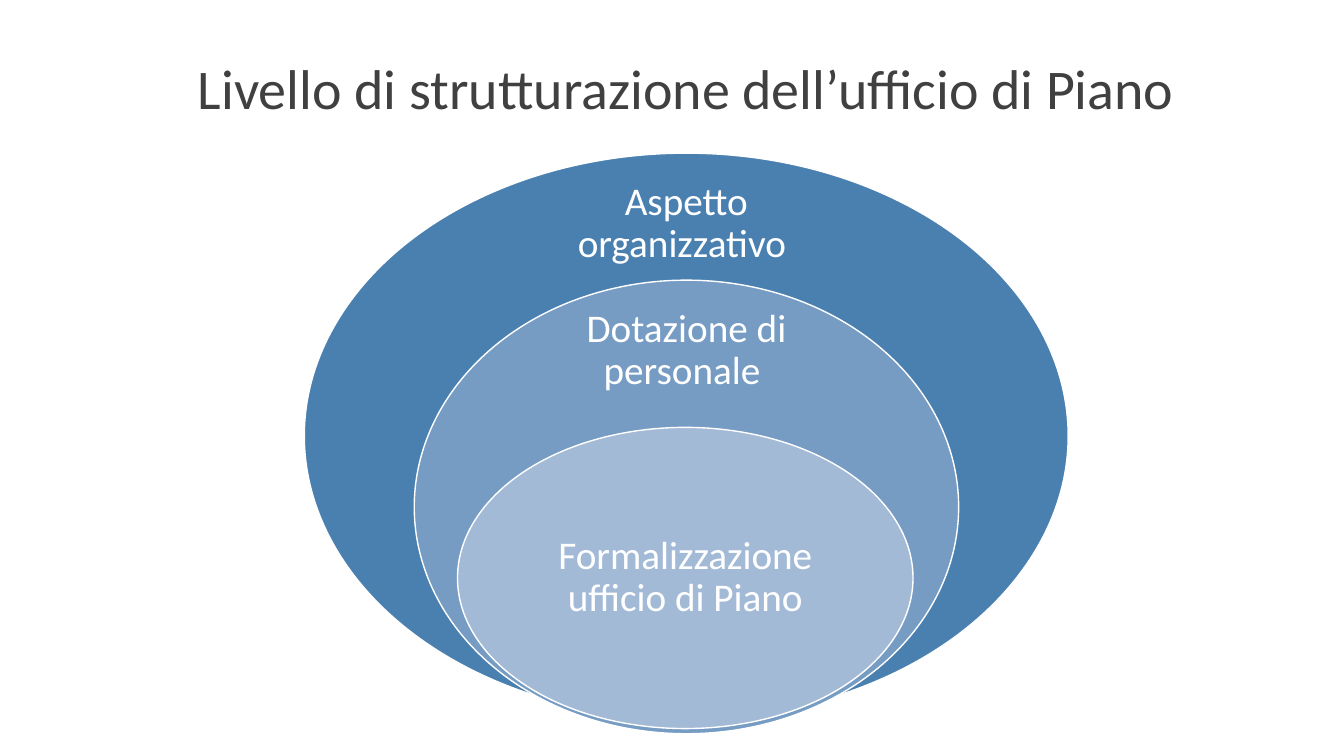
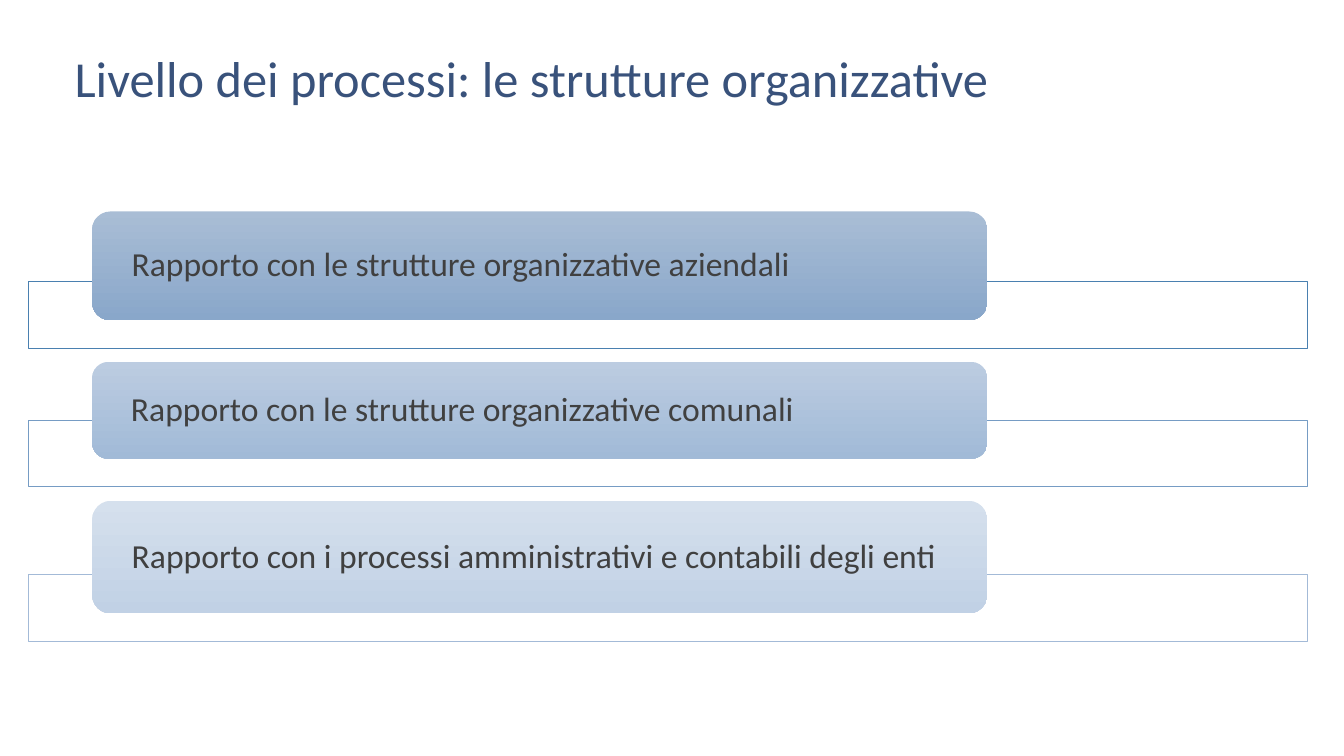
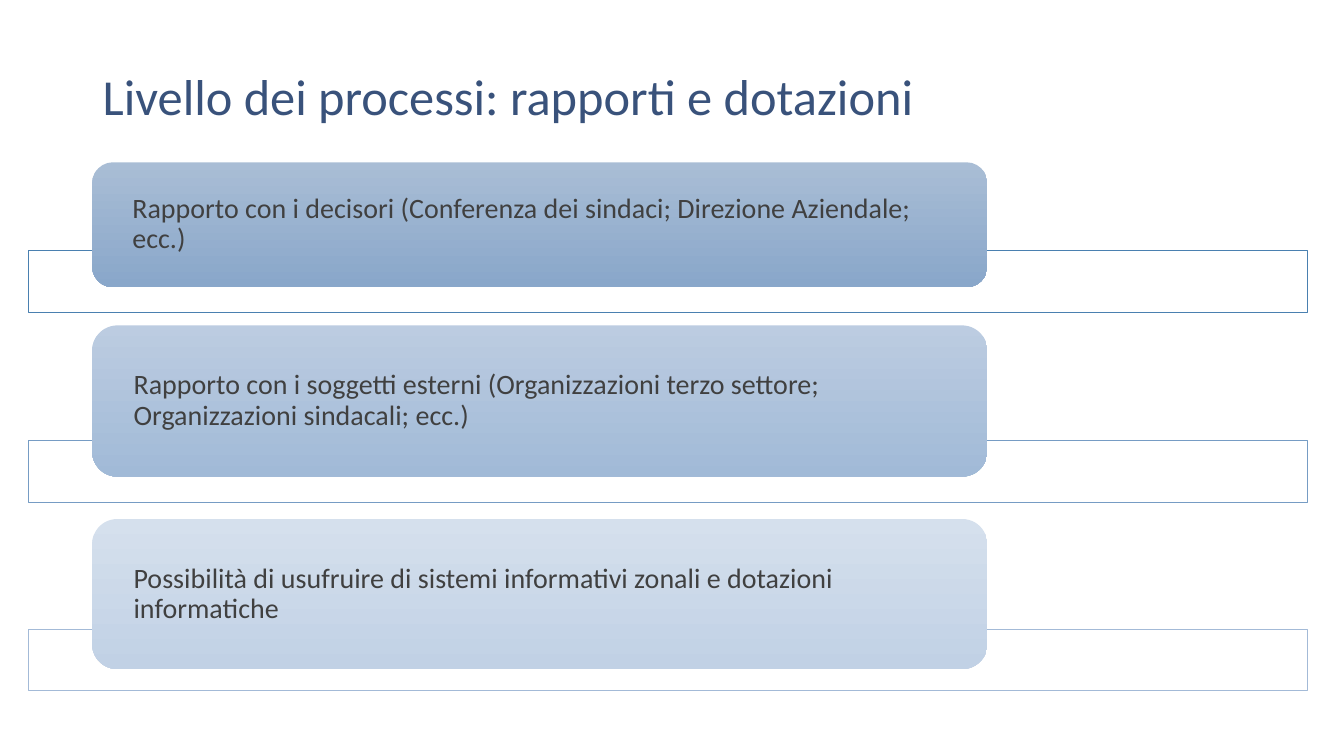
from pptx import Presentation
from pptx.dml.color import RGBColor
from pptx.enum.shapes import MSO_SHAPE
from pptx.enum.text import MSO_ANCHOR, PP_ALIGN
from pptx.util import Cm, Pt

FONT = "Calibri"
HUES = {
    "white": "FFFFFF",
    "text": "404040",
    "title": "39527B",
    "deep": "4A80B0",
    "mid": "769CC4",
    "pale": "A3BAD7",
}
RAMPS = {
    "deep": ("A9BDD5", "89A7CA"),
    "mid": ("BCCCE1", "A1BAD7"),
    "pale": ("D5E0ED", "C1D1E5"),
}


def tint(key):
    """Return the named colour."""
    return RGBColor.from_string(HUES[key])


def write(shape, text, size, hue, align=PP_ALIGN.LEFT, lead=0.9,
          anchor=MSO_ANCHOR.MIDDLE, pad=(0.25, 0.13), wrap=True):
    """Fill a shape with one styled paragraph."""
    frame = shape.text_frame
    frame.word_wrap = wrap
    frame.vertical_anchor = anchor
    frame.margin_left = frame.margin_right = Cm(pad[0])
    frame.margin_top = frame.margin_bottom = Cm(pad[1])
    line = frame.paragraphs[0]
    line.text = text
    line.alignment = align
    line.line_spacing = lead
    line.font.name = FONT
    line.font.size = Pt(size)
    line.font.color.rgb = tint(hue)


def label(slide, box, text, size, hue, **style):
    """Place a text box."""
    frame = slide.shapes.add_textbox(*map(Cm, box))
    write(frame, text, size, hue, **style)


def form(slide, kind, box, fill=None, edge=None, width=1):
    """Place a flat shape with an optional fill and outline."""
    shape = slide.shapes.add_shape(kind, *map(Cm, box))
    shape.shadow.inherit = False
    if fill:
        shape.fill.solid()
        shape.fill.fore_color.rgb = tint(fill)
    if edge:
        shape.line.color.rgb = tint(edge)
        shape.line.width = Pt(width)
    else:
        shape.line.fill.background()
    return shape


def head(slide, box, text):
    """Place the title of a list slide."""
    label(slide, box, text, 36, "title", lead=0.8, anchor=MSO_ANCHOR.BOTTOM)


def ring(slide, box, hue, text, drop, size):
    """Draw an ellipse with a centred label a given drop below its top."""
    left, top, width, _ = box
    form(slide, MSO_SHAPE.OVAL, box, hue, "white")
    wide, high = size
    label(slide, (left + (width - wide) / 2, top + drop, wide, high), text,
          28, "white", align=PP_ALIGN.CENTER, pad=(0.56, 0.56))


def row(slide, box, hue, text, size, high, shift, band):
    """Draw a band and the pill that lies over its left part."""
    left, top, width = box
    form(slide, MSO_SHAPE.RECTANGLE, (left, top + shift, width, band),
         "white", hue, 0.5)
    pill = form(slide, MSO_SHAPE.ROUNDED_RECTANGLE,
                (left + 0.05 * width, top, 0.7 * width, high))
    pill.fill.gradient()
    pill.fill.gradient_angle = 270
    for stop, code in zip(pill.fill.gradient_stops, RAMPS[hue]):
        stop.color.rgb = RGBColor.from_string(code)
    write(pill, text, size, "text", pad=(0.86, 0))


def stack(slide, box, size, band, rows):
    """Draw a list of rows, each given as text, top, height and band shift."""
    left, top, width = box
    for hue, (text, down, high, shift) in zip(RAMPS, rows):
        row(slide, (left, top + down, width), hue, text, size, high, shift,
            band)


def nest(slide):
    """Build the slide of nested ellipses."""
    ring(slide, (7.67, 3.86, 19.25, 14.25), "deep", "Aspetto organizzativo ",
         0.71, (6.73, 2.13))
    ring(slide, (10.44, 7.06, 13.72, 11.43), "mid", "Dotazione di personale ",
         0.71, (6.38, 2.13))
    ring(slide, (11.53, 10.77, 11.48, 7.59), "pale",
         "Formalizzazione ufficio di Piano", 1.88, (8.1, 3.81))
    label(slide, (4.37, 0.38, 25.83, 2.57),
          "Livello di strutturazione dell’ufficio di Piano", 40, "text",
          align=PP_ALIGN.CENTER, lead=1.5, anchor=MSO_ANCHOR.TOP, wrap=False)


def units(slide):
    """Build the slide on organisational structures."""
    head(slide, (1.63, -0.15, 30.48, 2.97),
         "Livello dei processi: le strutture organizzative")
    stack(slide, (0.71, 5.33, 32.23), 24, 1.68, [
        ("Rapporto con le strutture organizzative aziendali",
         0, 2.74, 1.76),
        ("Rapporto con le strutture organizzative comunali",
         3.79, 2.44, 1.47),
        ("Rapporto con i processi amministrativi e contabili degli enti",
         7.29, 2.84, 1.86),
    ])


def links(slide):
    """Build the slide on relations and equipment."""
    head(slide, (2.34, 1.02, 29.21, 2.26),
         "Livello dei processi: rapporti e dotazioni")
    stack(slide, (0.71, 4.09, 32.23), 20, 1.55, [
        ("Rapporto con i decisori (Conferenza dei sindaci; "
         "Direzione Aziendale; ecc.)", 0, 3.15, 2.23),
        ("Rapporto con i soggetti esterni (Organizzazioni terzo settore; "
         "Organizzazioni sindacali; ecc.)", 4.11, 3.81, 2.9),
        ("Possibilità di usufruire di sistemi informativi zonali e "
         "dotazioni informatiche", 8.99, 3.78, 2.77),
    ])


def main():
    """Build and save the deck."""
    deck = Presentation()
    deck.slide_width = Cm(33.87)
    deck.slide_height = Cm(19.05)
    for build in (nest, units, links):
        build(deck.slides.add_slide(deck.slide_layouts[6]))
    deck.save("out.pptx")


if __name__ == "__main__":
    main()
